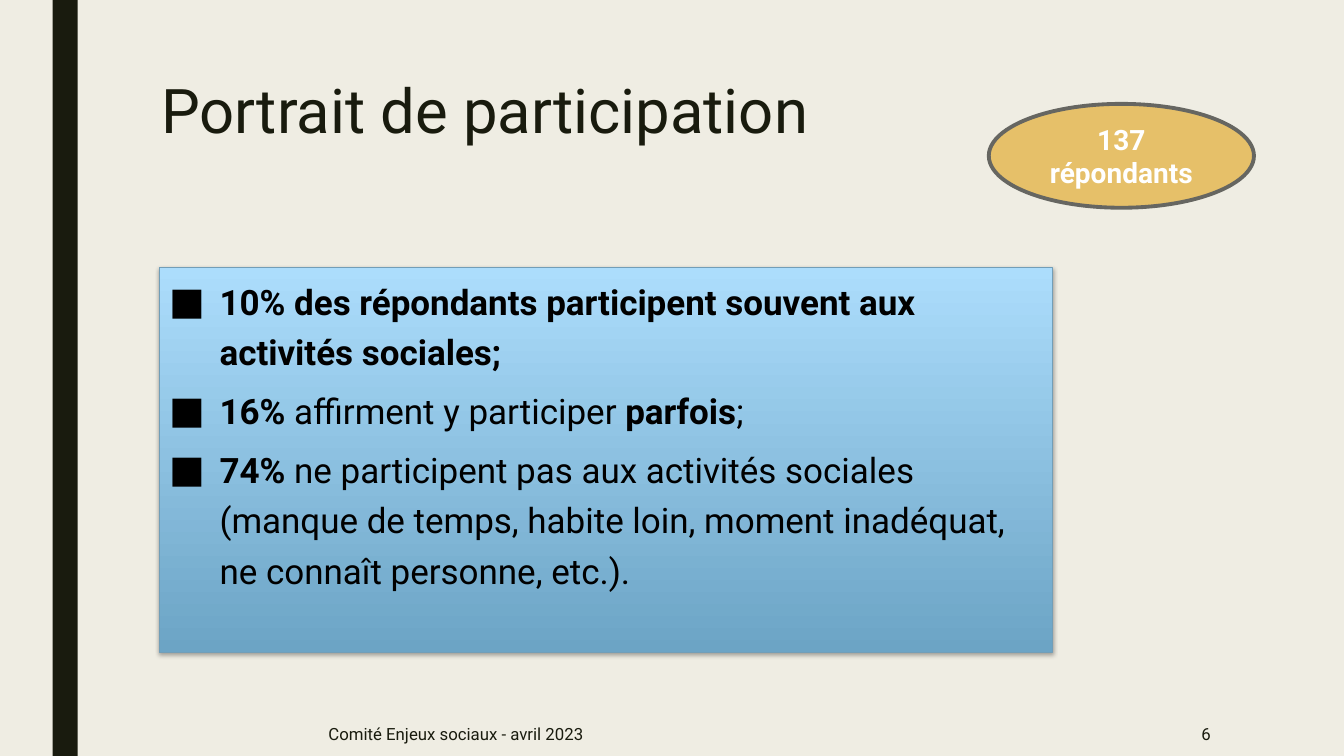
from lxml import etree
from pptx import Presentation
from pptx.dml.color import RGBColor
from pptx.enum import shapes, text
from pptx.oxml import ns
from pptx.util import Pt

HUES = {
    "paper": "EFEDE3", "ink": "191B0E", "black": "000000", "white": "FFFFFF",
    "deep": "6CA4C5", "sky": "ACDDFC", "edge": "729EB7",
    "gold": "E6C069", "gray": "666661",
}
KINDS = shapes.MSO_SHAPE
ALIGN = text.PP_ALIGN
ANCHOR = text.MSO_ANCHOR


def hue(name):
    return RGBColor.from_string(HUES[name])


def node(parent, tag, **attrs):
    """Append a DrawingML element and return it."""
    item = etree.SubElement(parent, ns.qn("a:" + tag))
    for key, value in attrs.items():
        item.set(key, str(value))
    return item


class Deck:
    font = "Roboto"

    def __init__(self, width, height):
        self.show = Presentation()
        self.show.slide_width, self.show.slide_height = Pt(width), Pt(height)
        self.slide = self.show.slides.add_slide(self.show.slide_layouts[6])
        back = self.slide.background.fill
        back.solid()
        back.fore_color.rgb = hue("paper")

    def shape(self, kind, box, fill, line=None, weight=1):
        """Add a shape; a pair of fill names gives a gradient from bottom to top."""
        item = self.slide.shapes.add_shape(kind, *map(Pt, box))
        item.shadow.inherit = False
        if isinstance(fill, tuple):
            item.fill.gradient()
            item.fill.gradient_angle = 90
            for stop, name, place in zip(item.fill.gradient_stops, fill, (0, 1)):
                stop.color.rgb = hue(name)
                stop.position = place
        else:
            item.fill.solid()
            item.fill.fore_color.rgb = hue(fill)
        if line:
            item.line.color.rgb = hue(line)
            item.line.width = Pt(weight)
        else:
            item.line.fill.background()
        return item

    def label(self, box, words, size, anchor=ANCHOR.MIDDLE, **form):
        item = self.slide.shapes.add_textbox(*map(Pt, box))
        self.prose(item, [[(words, False)]], size, "ink", anchor, **form)

    def prose(self, item, paras, size, color, anchor, **form):
        """Fill a shape with paragraphs, each a list of (words, bold) runs."""
        frame = item.text_frame
        frame.word_wrap = True
        frame.vertical_anchor = anchor
        form = {"alignment": ALIGN.LEFT, **form}
        for index, runs in enumerate(paras):
            para = frame.add_paragraph() if index else frame.paragraphs[0]
            for key, value in form.items():
                setattr(para, key, value)
            for words, bold in runs:
                for row, part in enumerate(words.split("\n")):
                    if row:
                        para.add_line_break()
                    run = para.add_run()
                    run.text = part
                    look = {"name": self.font, "size": Pt(size), "bold": bold}
                    for key, value in look.items():
                        setattr(run.font, key, value)
                    run.font.color.rgb = hue(color)

    def bullet(self, item, color, indent):
        for para in item.text_frame.paragraphs:
            props = para._p.get_or_add_pPr()
            props.set("marL", str(Pt(indent)))
            props.set("indent", str(-Pt(indent)))
            node(node(props, "buClr"), "srgbClr", val=HUES[color])
            node(props, "buSzPct", val=108000)
            node(props, "buFont", typeface=self.font)
            node(props, "buChar", char="■")

    def shade(self, item, color, alpha, blur, dist):
        """Cast a soft shadow straight down."""
        effects = item._element.spPr.find(ns.qn("a:effectLst"))
        cast = node(effects, "outerShdw", blurRad=Pt(blur), dist=Pt(dist),
                    dir=5400000, rotWithShape=0)
        tint = node(cast, "srgbClr", val=HUES[color])
        node(tint, "alpha", val=alpha * 1000)

    def save(self):
        self.show.save("out.pptx")


FACTS = [
    [("10% des répondants participent souvent aux activités sociales;", True)],
    [("16%", True), (" affirment y participer ", False),
     ("parfois", True), (";", False)],
    [("74% ", True),
     ("ne participent pas aux activités sociales \n"
      "(manque de temps, habite loin, moment inadéquat, \n"
      "ne connaît personne, etc.).", False)],
]


def main():
    deck = Deck(960, 540)
    deck.shape(KINDS.RECTANGLE, (37.5, 0, 18, 540), "ink")
    deck.label((108, 54, 756, 117), "Portrait de participation", 44,
               ANCHOR.TOP, line_spacing=0.89)

    panel = deck.shape(KINDS.RECTANGLE, (113.75, 190.8, 638, 275),
                       ("deep", "sky"), "edge", 0.75)
    deck.shade(panel, "black", 35, 3.1, 1.8)
    deck.prose(panel, FACTS, 25, "black", ANCHOR.TOP,
               line_spacing=1.2, space_before=Pt(6))
    deck.bullet(panel, "black", 36)

    badge = deck.shape(KINDS.OVAL, (706.3, 74.2, 189.4, 74.2),
                       "gold", "gray", 2.75)
    deck.prose(badge, [[("137 répondants", True)]], 20, "white",
               ANCHOR.MIDDLE, alignment=ALIGN.CENTER)

    foot, tall = 508.3, 31.7
    deck.label((227.5, foot, 494.6, tall), "Comité Enjeux sociaux - avril 2023", 12)
    deck.label((746, foot, 126, tall), "6", 12, alignment=ALIGN.RIGHT)
    deck.save()


if __name__ == "__main__":
    main()
